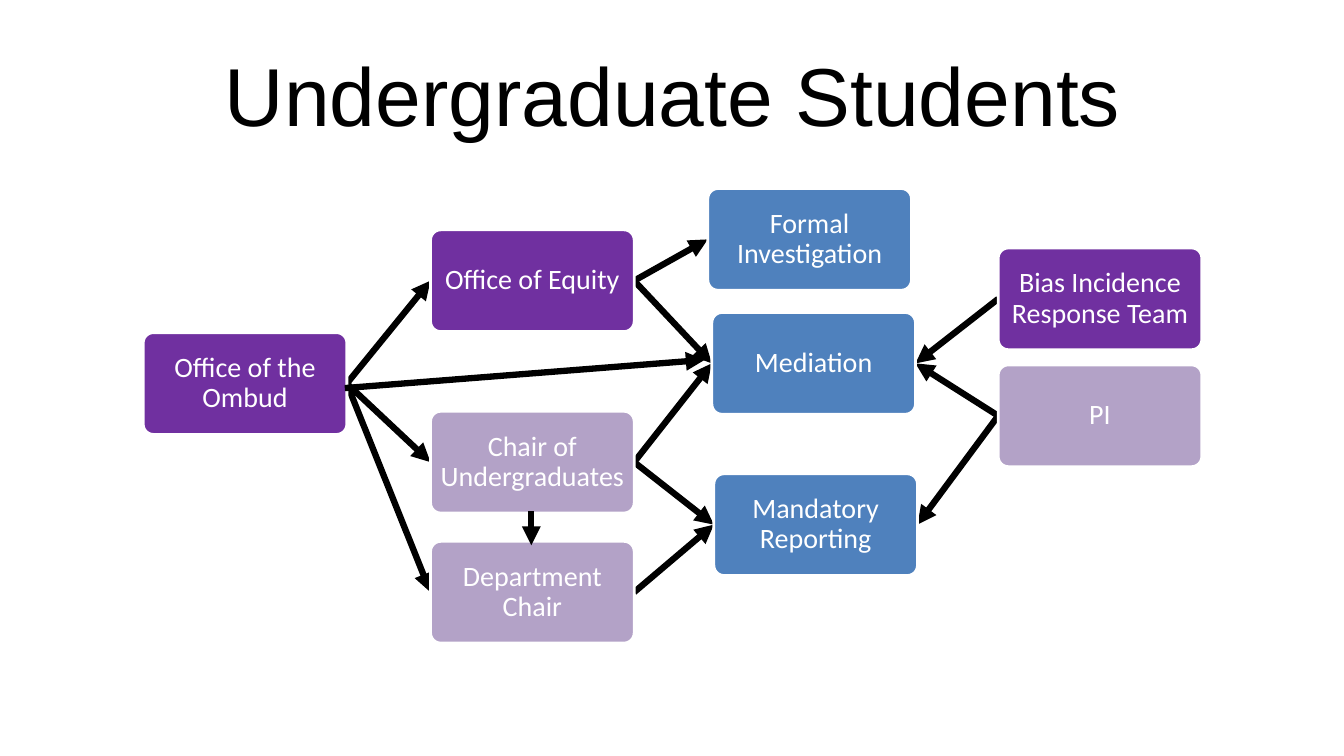
"""Build a slide charting where undergraduate students can take a concern."""
from lxml import etree
from pptx import Presentation
from pptx.dml.color import RGBColor
from pptx.enum.shapes import MSO_CONNECTOR, MSO_SHAPE
from pptx.enum.text import MSO_ANCHOR, PP_ALIGN
from pptx.oxml.ns import qn
from pptx.util import Inches, Pt

ROUND = MSO_SHAPE.ROUNDED_RECTANGLE
LINE = MSO_CONNECTOR.STRAIGHT
CENTER = PP_ALIGN.CENTER
MIDDLE = MSO_ANCHOR.MIDDLE

PURPLE = RGBColor(0x70, 0x30, 0xA0)
LILAC = RGBColor(0xB3, 0xA2, 0xC7)
BLUE = RGBColor(0x4F, 0x81, 0xBD)
WHITE = RGBColor(0xFF, 0xFF, 0xFF)
BLACK = RGBColor(0, 0, 0)

TITLE = "Undergraduate Students"
COLS = (1.42, 4.27, 7.06, 9.9)
WIDE, HIGH = 2.02, 1.01

# name: (text, column, shift, top, fill)
BOXES = {
    "ombud": ("Office of the Ombud", 0, 0, 3.3, PURPLE),
    "equity": ("Office of Equity", 1, 0, 2.28, PURPLE),
    "formal": ("Formal Investigation", 2, -0.04, 1.87, BLUE),
    "mediate": ("Mediation", 2, 0, 3.1, BLUE),
    "chair": ("Chair of Undergraduates", 1, 0, 4.08, LILAC),
    "bias": ("Bias Incidence Response Team", 3, 0, 2.46, PURPLE),
    "dept": ("Department Chair", 1, 0, 5.37, LILAC),
    "report": ("Mandatory Reporting", 2, 0.02, 4.7, BLUE),
    "lead": ("PI", 3, 0, 3.62, LILAC),
}
LINKS = [
    ("ombud", "equity"), ("ombud", "chair"), ("ombud", "dept"),
    ("equity", "formal"), ("equity", "mediate"),
    ("chair", "mediate"), ("chair", "report"), ("dept", "report"),
    ("bias", "mediate"), ("lead", "mediate"), ("lead", "report"),
]
LOOSE = [(5.27, 5.07, 5.27, 5.41), (3.42, 3.85, 6.99, 3.57)]
LEFT, RIGHT = 1, 3


def add_arrow(slide, ends):
    """Draw a thick black arrow between two points in inches."""
    arrow = slide.shapes.add_connector(LINE, *map(Inches, ends))
    arrow.line.color.rgb = BLACK
    arrow.line.width = Pt(4.5)
    etree.SubElement(arrow.line._get_or_add_ln(), qn("a:tailEnd"), type="triangle")
    etree.SubElement(arrow._element.spPr, qn("a:effectLst"))
    return arrow


def add_box(slide, text, col, shift, top, fill):
    """Draw one labelled box in its column."""
    place = map(Inches, (COLS[col] + shift, top, WIDE, HIGH))
    box = slide.shapes.add_shape(ROUND, *place)
    box.adjustments[0] = 0.1
    box.shadow.inherit = False
    box.fill.solid()
    box.fill.fore_color.rgb = fill
    box.line.color.rgb = WHITE
    box.line.width = Pt(2)
    frame = box.text_frame
    frame.word_wrap = True
    frame.vertical_anchor = MIDDLE
    frame.margin_left = frame.margin_right = Inches(0.01)
    frame.margin_top = frame.margin_bottom = Inches(0.01)
    frame.text = text
    para = frame.paragraphs[0]
    para.alignment = CENTER
    para.line_spacing = 0.9
    para.font.name = "Calibri"
    para.font.size = Pt(20)
    para.font.color.rgb = WHITE
    return box


def add_title(slide):
    """Place and format the title."""
    title = slide.shapes.title
    title.left, title.top = Inches(0.67), Inches(0.3)
    title.width, title.height = Inches(12), Inches(1.25)
    title.text_frame.text = TITLE
    title.text_frame.vertical_anchor = MIDDLE
    para = title.text_frame.paragraphs[0]
    para.alignment = CENTER
    para.font.name = "Arial"
    para.font.size = Pt(58.7)
    para.font.color.rgb = BLACK


def main():
    """Build and save the deck."""
    deck = Presentation()
    deck.slide_width, deck.slide_height = Inches(13.33), Inches(7.5)
    slide = deck.slides.add_slide(deck.slide_layouts[5])
    add_title(slide)
    arrows = [add_arrow(slide, (0, 0, 0, 0)) for _ in LINKS]
    boxes = {name: add_box(slide, *data) for name, data in BOXES.items()}
    for arrow, (start, end) in zip(arrows, LINKS):
        ahead = BOXES[start][1] < BOXES[end][1]
        arrow.begin_connect(boxes[start], RIGHT if ahead else LEFT)
        arrow.end_connect(boxes[end], LEFT if ahead else RIGHT)
    for ends in LOOSE:
        add_arrow(slide, ends)
    deck.save("out.pptx")


if __name__ == "__main__":
    main()
